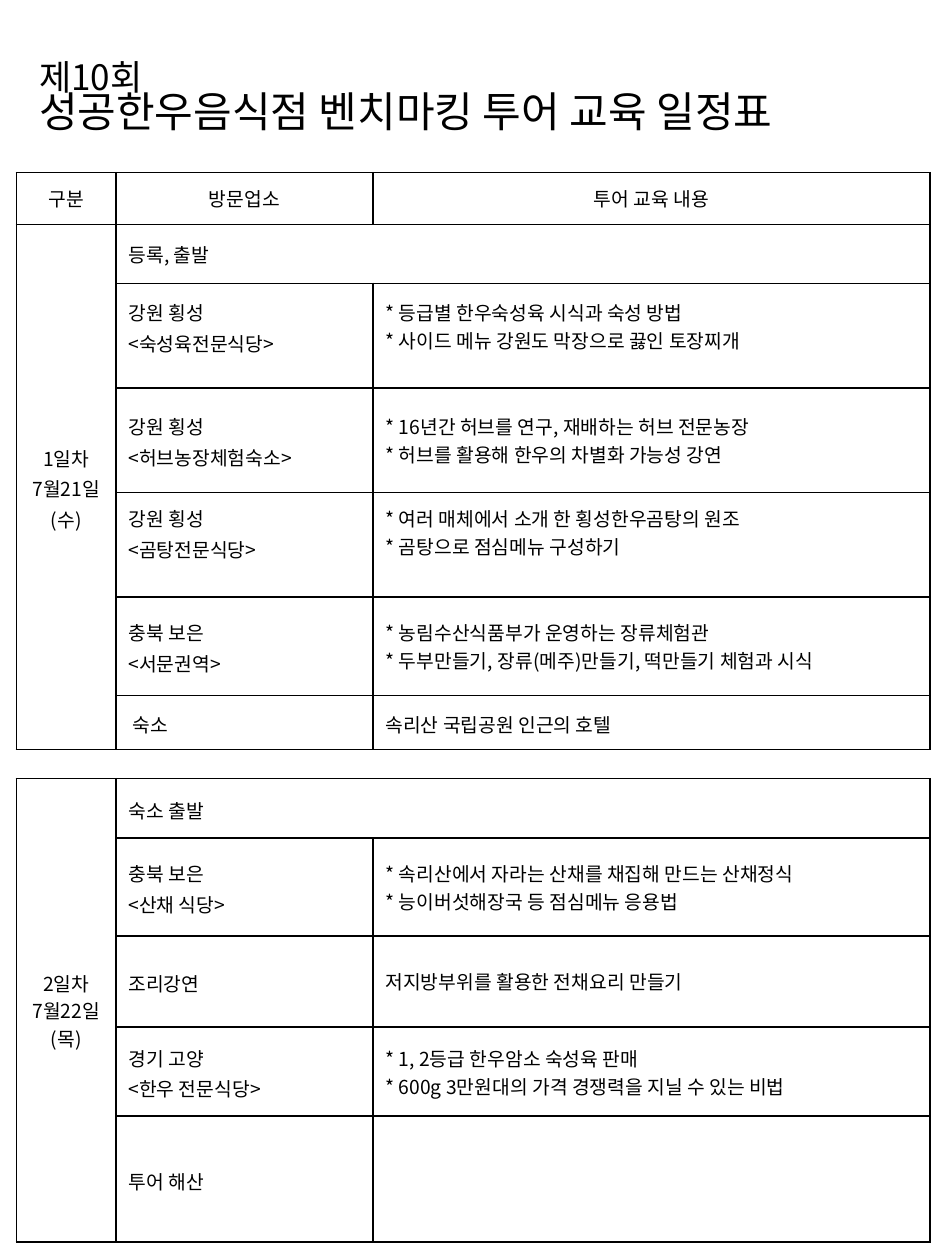
import pptx
import pptx.util
import pptx.dml.color
import pptx.enum.text
import pptx.oxml
import pptx.oxml.ns
from dataclasses import dataclass

COLORS = {"ink": "000000", "paper": "FFFFFF"}
FONT = "Noto Sans CJK KR"
GRID_COLUMNS, GRID_ROWS = 750, 1000
SCHEDULE_COLUMNS = (79, 204, 442)
LEFT = 13
LOOSE, NOTE_SPACING = 1.1, pptx.util.Pt(16)
CENTER, START = pptx.enum.text.PP_ALIGN.CENTER, pptx.enum.text.PP_ALIGN.LEFT
MIDDLE = pptx.enum.text.MSO_ANCHOR.MIDDLE

presentation = pptx.Presentation()
presentation.slide_width = pptx.util.Inches(7.5)
presentation.slide_height = pptx.util.Inches(10)


@dataclass
class Stop:
    height: int
    place: str
    content: str = ""
    full_width: bool = False
    lift: int = 0
    place_spacing: float | None = LOOSE
    content_spacing: float | int | None = NOTE_SPACING


@dataclass
class Day:
    top: int
    label: str
    stops: list[Stop]
    label_spacing: float | None = None
    header: tuple[str, ...] = ()
    header_height: int = 0


def across(columns: float) -> int:
    return round(presentation.slide_width * columns / GRID_COLUMNS)


def down(rows: float) -> int:
    return round(presentation.slide_height * rows / GRID_ROWS)


def color(name: str) -> pptx.dml.color.RGBColor:
    return pptx.dml.color.RGBColor.from_string(COLORS[name])


def add_east_asian(properties) -> None:
    properties.append(pptx.oxml.parse_xml(
        f'<a:ea {pptx.oxml.ns.nsdecls("a")} typeface="{FONT}"/>'))


def style_font(paragraph, size: float | None = None) -> None:
    paragraph.font.name = FONT
    paragraph.font.color.rgb = color("ink")
    if size:
        paragraph.font.size = pptx.util.Pt(size)
    add_east_asian(paragraph._p.pPr.find(pptx.oxml.ns.qn("a:defRPr")))


def frame_cell(cell) -> None:
    cell.fill.solid()
    cell.fill.fore_color.rgb = color("paper")
    properties = cell._tc.get_or_add_tcPr()
    for index, side in enumerate(("lnL", "lnR", "lnT", "lnB")):
        properties.insert(index, pptx.oxml.parse_xml(
            f'<a:{side} {pptx.oxml.ns.nsdecls("a")} w="{pptx.util.Pt(1)}"><a:solidFill>'
            f'<a:srgbClr val="{COLORS["ink"]}"/></a:solidFill></a:{side}>'))


def write_cell(cell, text: str, align=START, spacing=None, lift: int = 0) -> None:
    cell.vertical_anchor = MIDDLE
    if lift:
        cell.margin_bottom = down(lift)
    if not text:
        return
    cell.text_frame.text = text
    for paragraph in cell.text_frame.paragraphs:
        paragraph.alignment = align
        if spacing:
            paragraph.line_spacing = spacing
        style_font(paragraph, 11)


def draw_day(slide, day: Day) -> None:
    heights = [day.header_height] * bool(day.header) + [stop.height for stop in day.stops]
    table = slide.shapes.add_table(
        len(heights), len(SCHEDULE_COLUMNS), across(LEFT), down(day.top),
        across(sum(SCHEDULE_COLUMNS)), down(sum(heights))).table
    table.first_row = table.horz_banding = False
    for column, width in zip(table.columns, SCHEDULE_COLUMNS):
        column.width = across(width)
    for row, height in zip(table.rows, heights):
        row.height = down(height)
    for cell in table.iter_cells():
        frame_cell(cell)
    for index, heading in enumerate(day.header):
        write_cell(table.cell(0, index), heading, CENTER)
    first = int(bool(day.header))
    table.cell(first, 0).merge(table.cell(len(heights) - 1, 0))
    write_cell(table.cell(first, 0), day.label, CENTER, day.label_spacing)
    for row, stop in enumerate(day.stops, first):
        place, content = table.cell(row, 1), table.cell(row, 2)
        if stop.full_width:
            place.merge(content)
        else:
            write_cell(content, stop.content, spacing=stop.content_spacing, lift=stop.lift)
        write_cell(place, stop.place, spacing=stop.place_spacing, lift=stop.lift)


def draw_title(slide, lines: tuple[tuple[str, int], ...]) -> None:
    title = slide.shapes.title
    title.left, title.top = across(21), down(-4)
    title.width, title.height = across(701), down(167)
    title.text_frame.auto_size = pptx.enum.text.MSO_AUTO_SIZE.NONE
    title.text_frame.word_wrap = True
    title.text_frame.vertical_anchor = MIDDLE
    paragraph = title.text_frame.paragraphs[0]
    paragraph.alignment = START
    paragraph.line_spacing = 0.76
    style_font(paragraph)
    for index, (text, size) in enumerate(lines):
        if index:
            paragraph.add_line_break()
        run = paragraph.add_run()
        run.text = text
        run.font.size = pptx.util.Pt(size)


DAYS = [
    Day(137, "1일차\n7월21일\n(수)", [
        Stop(47, "등록, 출발", full_width=True, place_spacing=None),
        Stop(83, "강원 횡성\n<숙성육전문식당>",
             "* 등급별 한우숙성육 시식과 숙성 방법\n* 사이드 메뉴 강원도 막장으로 끓인 토장찌개", lift=20),
        Stop(83, "강원 횡성\n<허브농장체험숙소>",
             "* 16년간 허브를 연구, 재배하는 허브 전문농장\v* 허브를 활용해 한우의 차별화 가능성 강연"),
        Stop(83, "강원 횡성\n<곰탕전문식당>",
             "* 여러 매체에서 소개 한 횡성한우곰탕의 원조\v* 곰탕으로 점심메뉴 구성하기", lift=25),
        Stop(78, "충북 보은\n<서문권역>",
             "* 농림수산식품부가 운영하는 장류체험관\v* 두부만들기, 장류(메주)만들기, 떡만들기 체험과 시식"),
        Stop(43, " 숙소", "속리산 국립공원 인근의 호텔", content_spacing=LOOSE),
    ], LOOSE, ("구분", "방문업소", "투어 교육 내용"), 41),
    Day(618, "2일차\n7월22일\n(목)", [
        Stop(47, "숙소 출발", full_width=True),
        Stop(78, "충북 보은\n<산채 식당>",
             "* 속리산에서 자라는 산채를 채집해 만드는 산채정식\v* 능이버섯해장국 등 점심메뉴 응용법"),
        Stop(72, "조리강연", "저지방부위를 활용한 전채요리 만들기"),
        Stop(71, "경기 고양\n<한우 전문식당>",
             "* 1, 2등급 한우암소 숙성육 판매\v* 600g 3만원대의 가격 경쟁력을 지닐 수 있는 비법"),
        Stop(100, "투어 해산"),
    ]),
]


def main() -> None:
    slide = presentation.slides.add_slide(presentation.slide_layouts[5])
    draw_title(slide, (("제10회", 20), ("성공한우음식점 벤치마킹 투어 교육 일정표", 24)))
    for day in DAYS:
        draw_day(slide, day)
    presentation.save("out.pptx")


if __name__ == "__main__":
    main()
